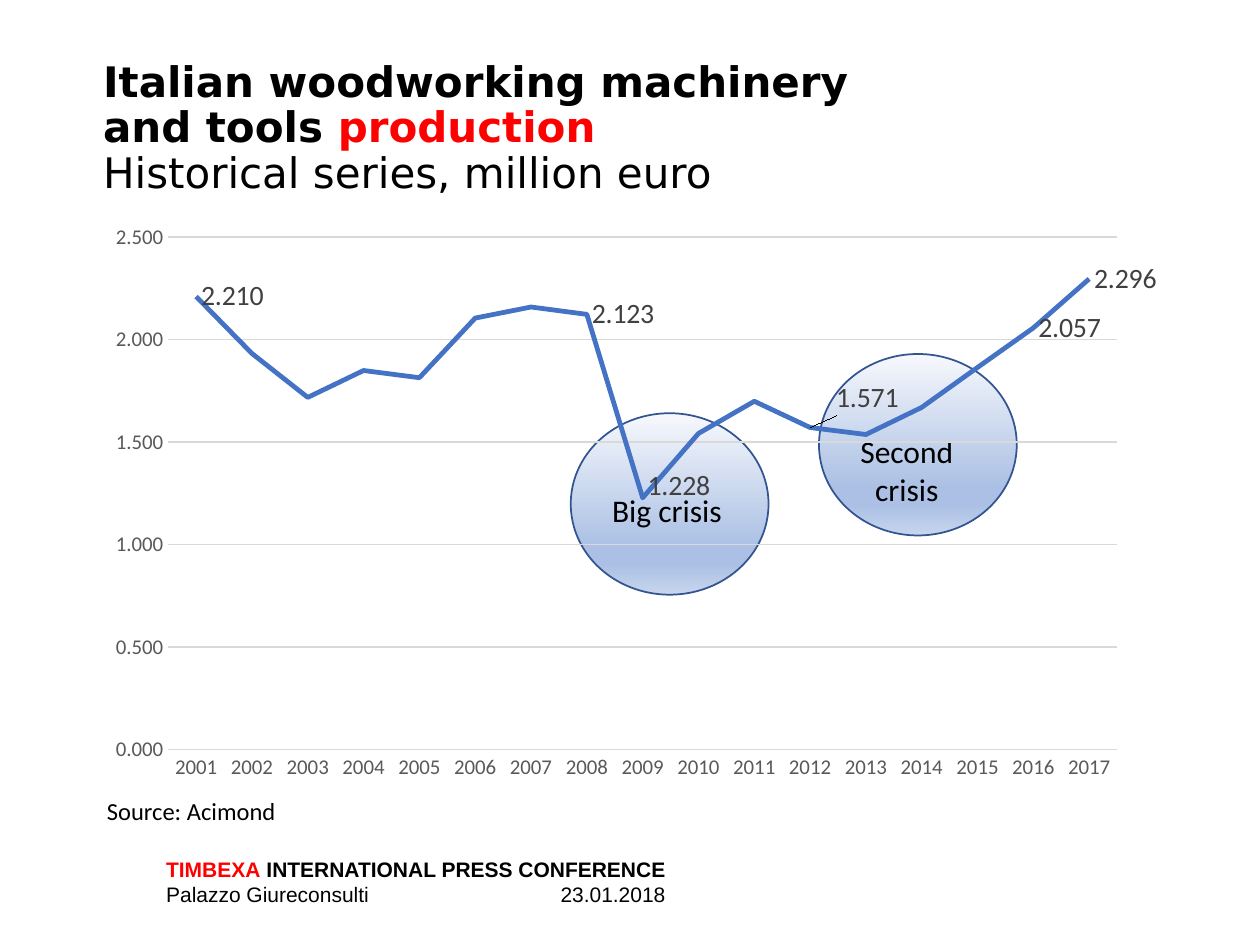
import pptx
import pptx.chart.data
import pptx.dml.color
import pptx.enum.chart
import pptx.enum.shapes
import pptx.enum.text
import pptx.oxml
import pptx.oxml.ns
import pptx.util
from lxml import etree

Inches = pptx.util.Inches
Pt = pptx.util.Pt
RGB = pptx.dml.color.RGBColor.from_string
qn = pptx.oxml.ns.qn

COLORS = {"text": "000000", "accent": "FF0000", "series": "4472C4", "axis": "595959",
          "grid": "D9D9D9", "label": "404040", "outline": "325491"}
GRADIENT = [(0, "F6F8FC"), (74, "ABC0E4"), (83, "ABC0E4"), (100, "C7D5ED")]
THOUSANDS = "#,##0.000"


def set_font(font, name, size, color="text", bold=False):
    formats = {"name": name, "size": Pt(size), "bold": bold}
    for attribute, value in formats.items():
        setattr(font, attribute, value)
    font.color.rgb = RGB(COLORS[color])


def add_text(box, paragraphs, name, size, wrap=True):
    """Add a text box; each paragraph is a list of (text, color, bold) runs."""
    frame = slide.shapes.add_textbox(*map(Inches, box)).text_frame
    frame.word_wrap = wrap
    for index, runs in enumerate(paragraphs):
        paragraph = frame.add_paragraph() if index else frame.paragraphs[0]
        for text, color, bold in runs:
            for part_index, part in enumerate(text.split("\n")):
                if part_index:
                    paragraph.add_line_break()
                if part:
                    run = paragraph.add_run()
                    run.text = part
                    set_font(run.font, name, size, color, bold)
    return frame


presentation = pptx.Presentation()
presentation.slide_width, presentation.slide_height = Inches(10), Inches(7.5)
slide = presentation.slides.add_slide(presentation.slide_layouts[6])

# Conference footer, with the date on a tab stop
footer = add_text((1.22, 6.75, 4.65, 0.51), [
    [("TIMBEXA", "accent", True), (" INTERNATIONAL PRESS CONFERENCE", "text", True)],
    [("Palazzo Giureconsulti\t23.01.2018", "text", False)],
], "Arial", 12)
tabs = etree.SubElement(footer.paragraphs[1]._p.get_or_add_pPr(), qn("a:tabLst"))
etree.SubElement(tabs, qn("a:tab"), pos=str(Inches(3.13)), algn="l")

# Crisis bubbles, behind the chart
for left, top, lines, width, height in [
    (4.53, 3.28, ["Big crisis"], 1.17, 0.4),
    (6.5, 2.81, ["Second", "crisis"], 1.15, 0.71),
]:
    bubble = slide.shapes.add_shape(pptx.enum.shapes.MSO_SHAPE.OVAL, Inches(left), Inches(top),
                                    Inches(1.57), Inches(1.44))
    bubble.shadow.inherit = False
    bubble.line.color.rgb = RGB(COLORS["outline"])
    bubble.line.width = Pt(1)
    bubble.fill.gradient()
    bubble.fill.gradient_angle = 270
    stops = bubble._element.spPr.find(qn("a:gradFill")).find(qn("a:gsLst"))
    for stop in list(stops):
        stops.remove(stop)
    for percent, color in GRADIENT:
        stop = etree.SubElement(stops, qn("a:gs"), pos=str(percent * 1000))
        etree.SubElement(stop, qn("a:srgbClr"), val=color)
    caption = add_text((left + 0.23, top + 0.57, width, height),
                       [[(line, "text", False)] for line in lines], "Calibri", 18, wrap=False)
    for paragraph in caption.paragraphs[1:]:
        paragraph.alignment = pptx.enum.text.PP_ALIGN.CENTER

title = add_text((0.72, 0.42, 9.47, 1.21), [[
    ("Italian woodworking machinery\nand tools ", "text", True),
    ("production\n", "accent", True),
    ("Historical series, million euro", "text", False),
]], "DejaVu Sans", 24)
title.vertical_anchor = pptx.enum.text.MSO_ANCHOR.MIDDLE
title.paragraphs[0].line_spacing = 0.9

# Production chart
production = pptx.chart.data.CategoryChartData(number_format=THOUSANDS)
production.categories = [str(year) for year in range(2001, 2018)]
production.add_series("Series 1", [
    2.210, 1.932, 1.718, 1.849, 1.814, 2.105, 2.159, 2.123, 1.228,
    1.542, 1.699, 1.571, 1.537, 1.669, 1.864, 2.057, 2.296])
chart = slide.shapes.add_chart(pptx.enum.chart.XL_CHART_TYPE.LINE, Inches(0.75), Inches(1.7),
                               Inches(8.43), Inches(4.57), production).chart
chart.has_legend = False
chart.has_title = False
set_font(chart.font, "Calibri", 10)


def set_layout(parent, position, **values):
    """Place a chart part by fractions of the chart, as the child at the given position."""
    for old in parent.findall(qn("c:layout")):
        parent.remove(old)
    layout = etree.Element(qn("c:layout"))
    manual = etree.SubElement(layout, qn("c:manualLayout"))
    for tag, value in values.items():
        etree.SubElement(manual, qn("c:" + tag), val=str(value))
    parent.insert(position, layout)


plot_area = chart._chartSpace.find(qn("c:chart")).find(qn("c:plotArea"))
set_layout(plot_area, 0, layoutTarget="inner", xMode="edge", yMode="edge",
           x=0.07, y=0.04, w=0.9, h=0.89)

for axis in (chart.category_axis, chart.value_axis):
    axis.major_tick_mark = pptx.enum.chart.XL_TICK_MARK.NONE
    axis.minor_tick_mark = pptx.enum.chart.XL_TICK_MARK.NONE
    set_font(axis.tick_labels.font, "Calibri", 12, "axis")
chart.category_axis.format.line.color.rgb = RGB(COLORS["grid"])
chart.category_axis.format.line.width = Pt(1)

values = chart.value_axis
for attribute, value in {"minimum_scale": 0, "maximum_scale": 2.5, "major_unit": 0.5}.items():
    setattr(values, attribute, value)
values.format.line.fill.background()
values.major_gridlines.format.line.color.rgb = RGB(COLORS["grid"])
values.major_gridlines.format.line.width = Pt(0.75)
values.tick_labels.number_format = THOUSANDS
values.tick_labels.number_format_is_linked = False

chart.plots[0].vary_by_categories = False
series = chart.plots[0].series[0]
series.smooth = False
series.marker.style = pptx.enum.chart.XL_MARKER_STYLE.NONE
series.format.line.color.rgb = RGB(COLORS["series"])
series.format.line.width = Pt(2.75)

# Only the turning points carry a value; some are nudged off the line
series.data_labels.show_value = False
nudges = {2009: (0, -0.02), 2012: (0.02, -0.05)}
for year in (2001, 2008, 2009, 2012, 2016, 2017):
    label = series.points[year - 2001].data_label
    set_font(label.font, "Calibri", 16, "label")
    label.position = pptx.enum.chart.XL_LABEL_POSITION.RIGHT
    if year in nudges:
        x, y = nudges[year]
        set_layout(label._get_or_add_dLbl(), 1, x=x, y=y)

add_text((0.75, 6.27, 2.28, 0.34), [[("Source: Acimond", "text", False)]], "Calibri", 14)

presentation.save("out.pptx")
